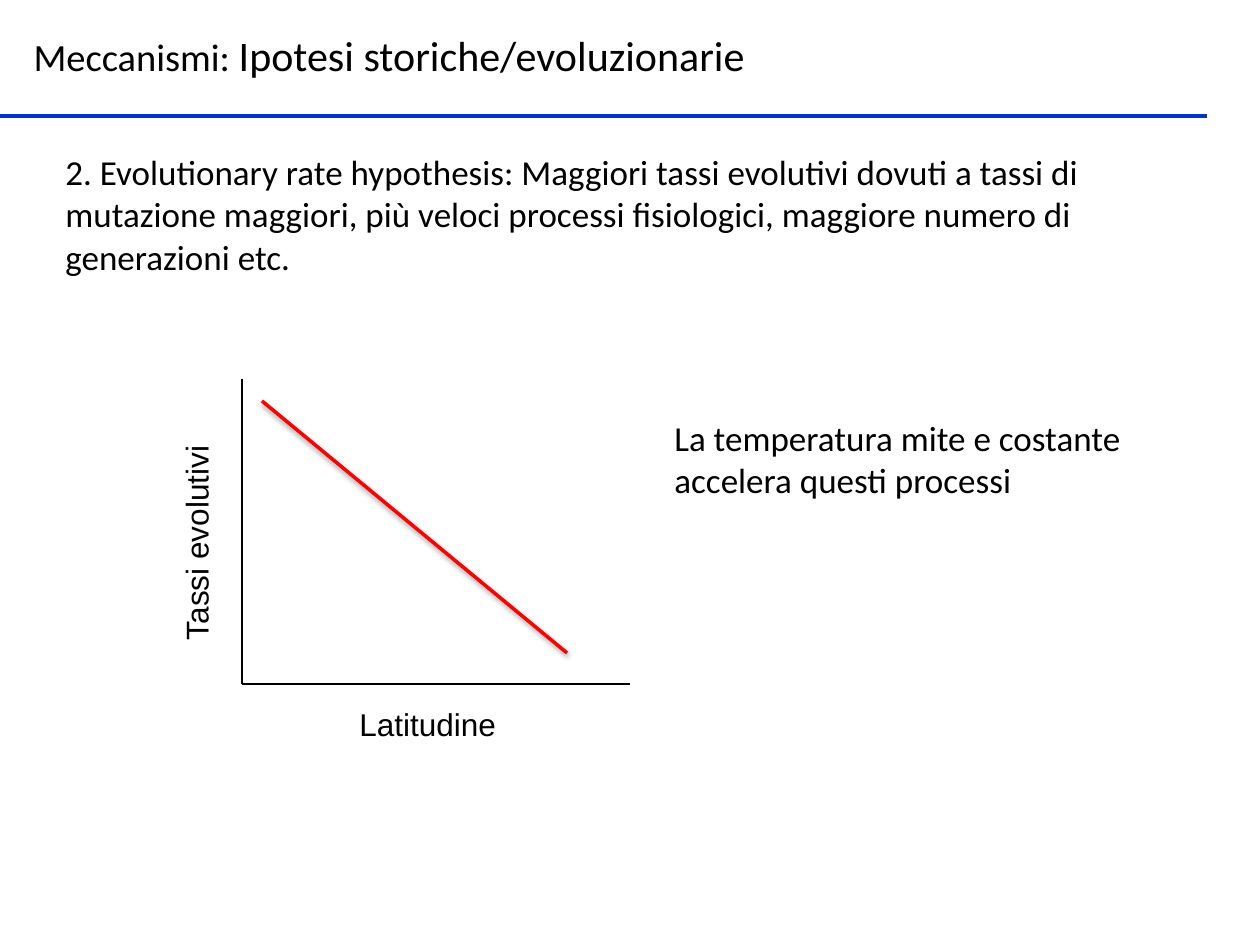
from lxml.etree import SubElement
from pptx import Presentation
from pptx.dml.color import RGBColor
from pptx.enum.shapes import MSO_CONNECTOR
from pptx.enum.text import MSO_ANCHOR, MSO_AUTO_SIZE, PP_ALIGN
from pptx.oxml.ns import qn
from pptx.util import Emu, Pt

PX = 914400 / 126  # EMU in one px
BLACK = RGBColor(0x00, 0x00, 0x00)
BLUE = RGBColor(0x03, 0x32, 0xC9)
RED = RGBColor(0xFF, 0x00, 0x00)

# Content: runs are (text, size in pt); places are left, top, width, height in px
TITLE = {
    "runs": [("Meccanismi: ", 22), ("Ipotesi storiche/evoluzionarie", 24)],
    "place": (21, 23, 1197, 63), "font": "Calibri",
}
TEXTS = [
    {"runs": [("2. Evolutionary rate hypothesis: Maggiori tassi evolutivi dovuti a "
               "tassi di mutazione maggiori, più veloci processi fisiologici, "
               "maggiore numero di generazioni etc.", 20)],
     "place": (53, 144, 1166, 140), "font": "Calibri"},
    {"runs": [("La temperatura mite e costante accelera questi processi", 20)],
     "place": (662, 410, 577, 97), "font": "Calibri"},
    {"runs": [("Latitudine", 18)],
     "place": (347, 698, 199, 51), "font": "Arial"},
    {"runs": [("Tassi evolutivi", 18)],
     "place": (49, 480, 294, 51), "font": "Arial", "rotation": 270},
]

# Lines: start, end, colour, width in pt
ORIGIN = (242, 684)
RULE = ((0, 116), (1207, 116), BLUE, 2)
AXES = [
    (ORIGIN, (242, 379), BLACK, 0.75),
    (ORIGIN, (630, 684), BLACK, 0.75),
]
TREND = ((262, 401), (567, 653), RED, 2)


def px(value):
    return Emu(round(value * PX))


def write_text(box, content):
    for name, value in zip(("left", "top", "width", "height"), content["place"]):
        setattr(box, name, px(value))
    box.rotation = content.get("rotation", 0)
    frame = box.text_frame
    frame_format = {"word_wrap": True, "auto_size": MSO_AUTO_SIZE.NONE,
                    "vertical_anchor": MSO_ANCHOR.MIDDLE}
    for name, value in frame_format.items():
        setattr(frame, name, value)
    para = frame.paragraphs[0]
    para.alignment = PP_ALIGN.LEFT
    for text, size in content["runs"]:
        span = para.add_run()
        span.text = text
        for name, value in {"name": content["font"], "size": Pt(size)}.items():
            setattr(span.font, name, value)
        span.font.color.rgb = BLACK


def draw_line(page, start, end, color, width):
    line = page.shapes.add_connector(
        MSO_CONNECTOR.STRAIGHT, *map(px, start + end))
    line.line.color.rgb = color
    line.line.width = Pt(width)
    effects = SubElement(line._element.spPr, qn("a:effectLst"))
    return effects


def add_shadow(effects):
    shadow = SubElement(effects, qn("a:outerShdw"), blurRad="40000",
                        dist="20000", dir="5400000", rotWithShape="0")
    color = SubElement(shadow, qn("a:srgbClr"), val=str(BLACK))
    SubElement(color, qn("a:alpha"), val="38000")


def main():
    deck = Presentation()
    deck.slide_width, deck.slide_height = px(1260), px(945)
    page = deck.slides.add_slide(deck.slide_layouts[5])  # title only

    # Heading and the rule below it
    write_text(page.shapes.title, TITLE)
    draw_line(page, *RULE)

    # Axes of the sketch, then its labels and the body text
    for axis in AXES:
        draw_line(page, *axis)
    for content in TEXTS:
        box = page.shapes.add_textbox(*map(px, content["place"]))
        write_text(box, content)

    # Falling trend with a soft shadow
    add_shadow(draw_line(page, *TREND))

    deck.save("out.pptx")


if __name__ == "__main__":
    main()
